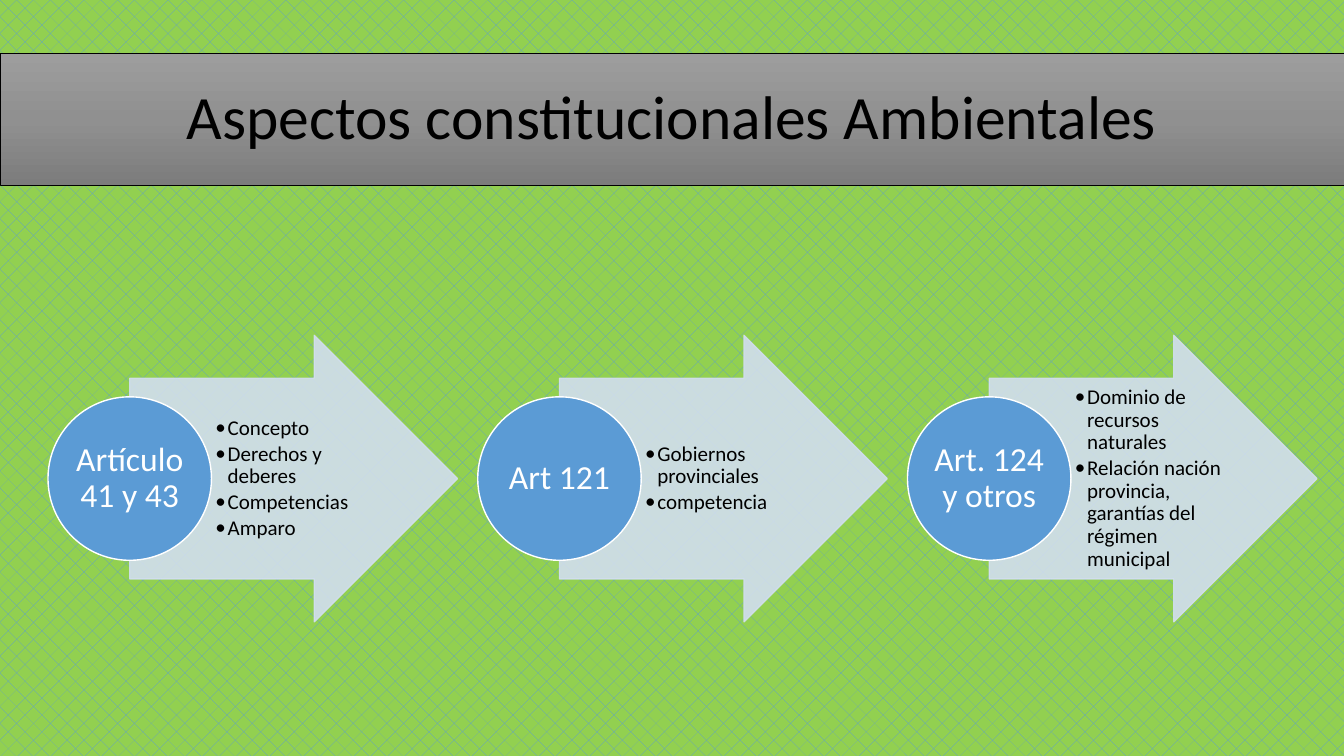
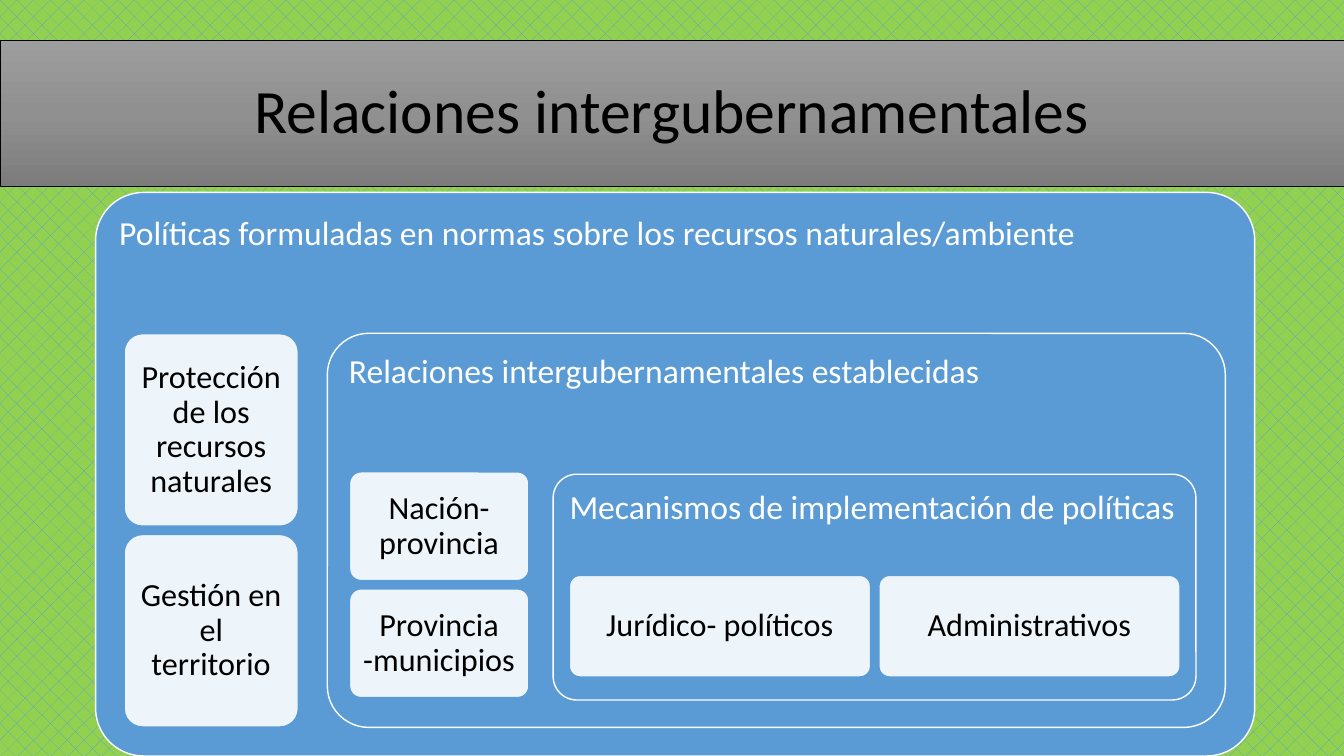
from copy import deepcopy

from lxml import etree
from pptx import Presentation
from pptx.dml.color import RGBColor
from pptx.enum.dml import MSO_PATTERN
from pptx.enum.shapes import MSO_SHAPE
from pptx.enum.text import MSO_ANCHOR, PP_ALIGN
from pptx.oxml.ns import qn
from pptx.util import Cm, Pt

RECTANGLE = MSO_SHAPE.RECTANGLE
ROUNDED = MSO_SHAPE.ROUNDED_RECTANGLE
ARROW = MSO_SHAPE.RIGHT_ARROW
CIRCLE = MSO_SHAPE.OVAL
DIAMONDS = MSO_PATTERN.DOTTED_DIAMOND
TOP, MIDDLE = MSO_ANCHOR.TOP, MSO_ANCHOR.MIDDLE
LEFT, CENTER = PP_ALIGN.LEFT, PP_ALIGN.CENTER

GREEN = RGBColor(0x92, 0xD0, 0x50)
BLUE = RGBColor(0x5B, 0x9B, 0xD5)
PALE_BLUE = RGBColor(0xD2, 0xDE, 0xEF)
WHITE = RGBColor(0xFF, 0xFF, 0xFF)
BLACK = RGBColor(0x00, 0x00, 0x00)
BAND_STOPS = [
    (0, RGBColor(0x9D, 0x9D, 0x9D)),
    (0.5, RGBColor(0x90, 0x90, 0x90)),
    (1, RGBColor(0x7C, 0x7C, 0x7C)),
]
FONT = "Calibri"
SLIDE_WIDTH, SLIDE_HEIGHT = 33.87, 19.05


def add_figure(page, kind, area, fill, line, width=1, adjustments=(), opacity=None):
    figure = page.shapes.add_shape(kind, *map(Cm, area))
    figure.shadow.inherit = False
    figure.fill.solid()
    figure.fill.fore_color.rgb = fill
    figure.line.color.rgb = line
    figure.line.width = Pt(width)
    for index, value in enumerate(adjustments):
        figure.adjustments[index] = value
    if opacity:
        for color in figure._element.spPr.xpath(f".//a:srgbClr[@val='{fill}']"):
            etree.SubElement(color, qn("a:alpha"), val=str(opacity * 1000))
    return figure


def write(box, lines, size, color, align=CENTER, anchor=MIDDLE, inset=0.05):
    frame = box.text_frame
    frame.word_wrap = True
    frame.vertical_anchor = anchor
    frame.margin_left = frame.margin_right = Cm(inset)
    frame.margin_top = frame.margin_bottom = Cm(inset)
    for index, line in enumerate(lines):
        para = frame.add_paragraph() if index else frame.paragraphs[0]
        para.alignment = align
        para.line_spacing = 0.9
        span = para.add_run()
        span.text = line
        span.font.name = FONT
        span.font.size = Pt(size)
        span.font.color.rgb = color
    return frame


deck = Presentation()
deck.slide_width = Cm(SLIDE_WIDTH)
deck.slide_height = Cm(SLIDE_HEIGHT)

pages = []
for title, top, height in [
    ("Aspectos constitucionales Ambientales", 1.35, 3.32),
    ("Relaciones intergubernamentales", 1.02, 3.68),
]:
    page = deck.slides.add_slide(deck.slide_layouts[6])
    backdrop = page.background.fill
    backdrop.patterned()
    backdrop.pattern = DIAMONDS
    backdrop.fore_color.rgb = BLUE
    backdrop.back_color.rgb = GREEN
    band = add_figure(page, RECTANGLE, (0, top, SLIDE_WIDTH, height), BLACK, BLACK, 0.5)
    band.fill.gradient()
    band.fill.gradient_angle = 270
    first_stop = band._element.spPr.xpath("./a:gradFill/a:gsLst/a:gs")[0]
    first_stop.addnext(deepcopy(first_stop))
    for stop, (position, color) in zip(band.fill.gradient_stops, BAND_STOPS):
        stop.position = position
        stop.color.rgb = color
    write(band, [title], 44, BLACK, inset=0.25)
    pages.append(page)

articles_page, relations_page = pages

ARTICLES = [
    ("Artículo 41 y 43", ["Concepto", "Derechos y deberes", "Competencias", "Amparo"]),
    ("Art 121", ["Gobiernos provinciales", "competencia"]),
    ("Art. 124 y otros", [
        "Dominio de recursos naturales",
        "Relación nación provincia, garantías del régimen municipal",
    ]),
]
ARTICLE_LEFT, ARTICLE_PITCH, ARTICLE_MIDDLE = 1.21, 10.83, 12.06
DIAMETER = 4.12
ARROW_WIDTH, ARROW_HEIGHT = 8.26, 7.22
DETAIL_WIDTH, DETAIL_HEIGHT = 4.01, 5.05

for index, (article, details) in enumerate(ARTICLES):
    left = ARTICLE_LEFT + index * ARTICLE_PITCH
    arrow_area = (left + DIAMETER / 2, ARTICLE_MIDDLE - ARROW_HEIGHT / 2, ARROW_WIDTH, ARROW_HEIGHT)
    add_figure(articles_page, ARROW, arrow_area, PALE_BLUE, PALE_BLUE,
               adjustments=(0.7, 0.5), opacity=90)
    detail_area = (left + DIAMETER, ARTICLE_MIDDLE - DETAIL_HEIGHT / 2, DETAIL_WIDTH, DETAIL_HEIGHT)
    box = articles_page.shapes.add_textbox(*map(Cm, detail_area))
    frame = write(box, details, 15, BLACK, LEFT)
    frame.margin_left = Cm(0.1)
    for para in frame.paragraphs:
        para.space_after = Pt(2.25)
        properties = para._p.get_or_add_pPr()
        properties.set("marL", str(Cm(0.31)))
        properties.set("indent", str(-Cm(0.31)))
        etree.SubElement(properties, qn("a:buFont"), typeface=FONT)
        etree.SubElement(properties, qn("a:buChar"), char="•")
    circle_area = (left, ARTICLE_MIDDLE - DIAMETER / 2, DIAMETER, DIAMETER)
    circle = add_figure(articles_page, CIRCLE, circle_area, BLUE, WHITE)
    write(circle, [article], 24, WHITE)

TILE_GAP = 0.21
PANELS = [
    ("Políticas formuladas en normas sobre los recursos naturales/ambiente",
     (2.41, 4.85, 29.21, 14.2), 0.085, (3.13, 8.41, 4.39, 4.85), "column",
     ["Protección de los recursos naturales", "Gestión en el territorio"]),
    ("Relaciones intergubernamentales establecidas",
     (8.25, 8.4, 22.63, 9.93), 0.105, (8.81, 11.89, 4.52, 2.74), "column",
     ["Nación- provincia", "Provincia -municipios"]),
    ("Mecanismos de implementación de políticas",
     (13.94, 11.95, 16.2, 5.69), 0.105, (14.35, 14.5, 7.59, 2.56), "row",
     ["Jurídico- políticos", "Administrativos"]),
]

for heading, panel_area, rounding, first_tile, direction, labels in PANELS:
    panel = add_figure(relations_page, ROUNDED, panel_area, BLUE, WHITE, adjustments=[rounding])
    write(panel, [heading], 24, WHITE, LEFT, TOP, 0.24)
    left, top, width, height = first_tile
    for label in labels:
        tile = add_figure(relations_page, ROUNDED, (left, top, width, height), WHITE, BLUE,
                          adjustments=[0.105], opacity=90)
        write(tile, [label], 23, BLACK, inset=0.23)
        if direction == "row":
            left += width + TILE_GAP
        else:
            top += height + TILE_GAP

deck.save("out.pptx")
